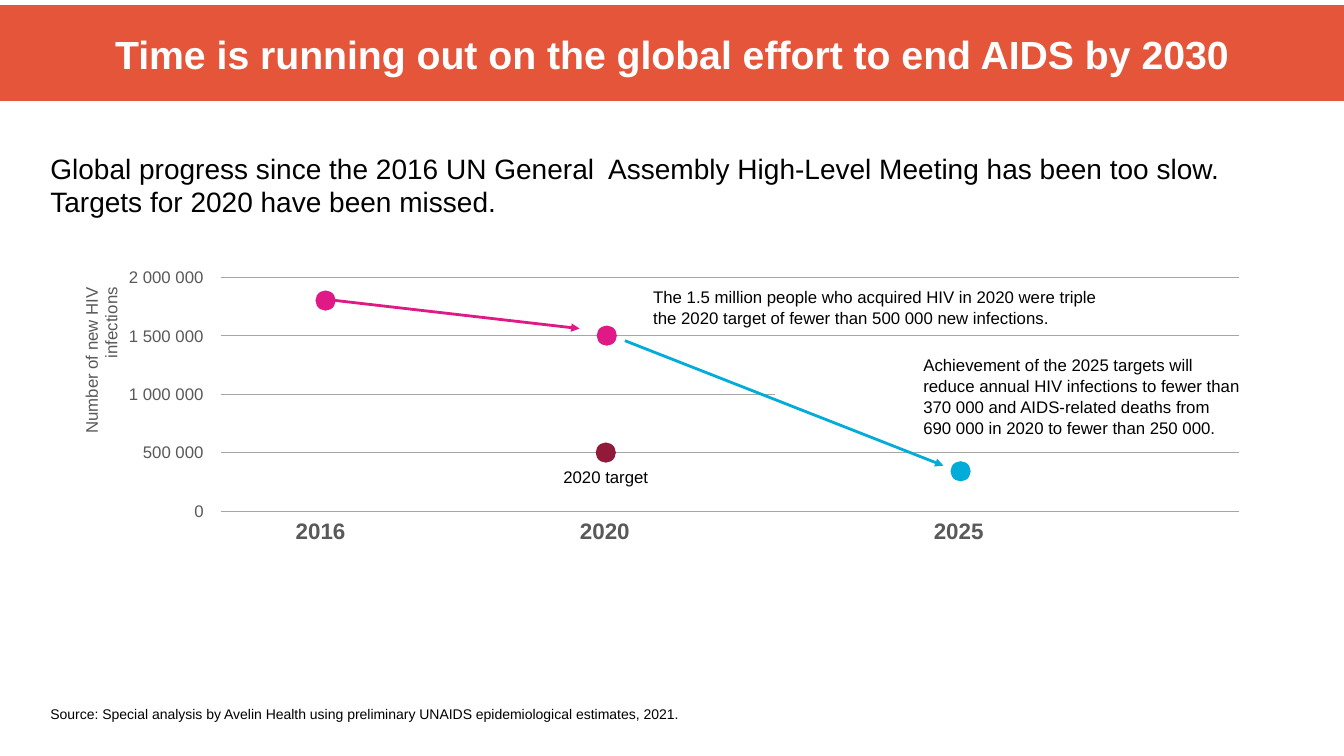
from lxml import etree
from pptx import Presentation
from pptx.dml.color import RGBColor
from pptx.enum.shapes import MSO_CONNECTOR, MSO_SHAPE
from pptx.enum.text import MSO_ANCHOR, PP_ALIGN
from pptx.oxml.ns import qn
from pptx.util import Inches, Pt

STRAIGHT, OVAL = MSO_CONNECTOR.STRAIGHT, MSO_SHAPE.OVAL
TOP, MIDDLE = MSO_ANCHOR.TOP, MSO_ANCHOR.MIDDLE
LEFT, CENTER, RIGHT = PP_ALIGN.LEFT, PP_ALIGN.CENTER, PP_ALIGN.RIGHT

ORANGE = RGBColor(0xE5, 0x55, 0x39)
MAGENTA = RGBColor(0xDF, 0x19, 0x85)
CYAN = RGBColor(0x01, 0xAD, 0xD8)
MAROON = RGBColor(0x91, 0x19, 0x3A)
GREY = RGBColor(0x59, 0x59, 0x59)
RULE = RGBColor(0xA6, 0xA6, 0xA6)
BLACK = RGBColor(0, 0, 0)
WHITE = RGBColor(0xFF, 0xFF, 0xFF)

COLS, ROWS = 40, 22.5
PLOT_LEFT, PLOT_RIGHT, SHORT_RIGHT = 6.57, 36.87, 23.07
ZERO_ROW, STEP_ROWS, STEP_VALUE = 15.21, 1.74, 500_000


def value_row(value):
    """Return the grid row of a number of new infections."""
    return ZERO_ROW - STEP_ROWS * value / STEP_VALUE


class Deck:
    """Hold the style, the grid and the current slide."""

    font = "Arial"

    def __init__(self):
        """Open a widescreen deck with one title-only slide."""
        self.prs = Presentation()
        self.prs.slide_width, self.prs.slide_height = Inches(13.33), Inches(7.5)
        self.s = self.prs.slides.add_slide(self.prs.slide_layouts[5])

    def x(self, cols):
        """Convert grid columns to a length."""
        return round(self.prs.slide_width * cols / COLS)

    def y(self, rows):
        """Convert grid rows to a length."""
        return round(self.prs.slide_height * rows / ROWS)

    def place(self, sp, left, top, width, height):
        """Set the position and size of a shape in grid units."""
        sp.left, sp.top = self.x(left), self.y(top)
        sp.width, sp.height = self.x(width), self.y(height)

    def fill_text(self, tf, paragraphs, size, color, bold=False, align=LEFT,
                  anchor=TOP, spacing=None, wrap=True):
        """Fill a text frame, one run to a paragraph."""
        tf.word_wrap, tf.vertical_anchor = wrap, anchor
        tf.margin_left = tf.margin_right = tf.margin_top = tf.margin_bottom = 0
        for i, text in enumerate(paragraphs):
            p = tf.add_paragraph() if i else tf.paragraphs[0]
            p.alignment = align
            if spacing:
                p.line_spacing = Pt(spacing)
            r = p.add_run()
            r.text = text
            r.font.name, r.font.size, r.font.bold = self.font, Pt(size), bold
            r.font.color.rgb = color

    def title(self, text, left, top, width, height):
        """Format the title placeholder as a coloured band."""
        sp = self.s.shapes.title
        self.place(sp, left, top, width, height)
        sp.fill.solid()
        sp.fill.fore_color.rgb = ORANGE
        self.fill_text(sp.text_frame, [text], 28, WHITE, True, CENTER, MIDDLE, 32)
        sp.text_frame.margin_top, sp.text_frame.margin_bottom = self.y(0.3), self.y(0.15)

    def text(self, paragraphs, left, top, width, height, size=12, color=BLACK,
             vertical=False, **style):
        """Add a text box, turned upwards if vertical."""
        sp = self.s.shapes.add_textbox(0, 0, 0, 0)
        self.place(sp, left, top, width, height)
        self.fill_text(sp.text_frame, paragraphs, size, color, **style)
        if vertical:
            sp.text_frame._txBody.bodyPr.set("vert", "vert270")

    def line(self, x1, y1, x2, y2, color, width, arrow=False):
        """Add a straight line, with an arrowhead if asked."""
        sp = self.s.shapes.add_connector(
            STRAIGHT, self.x(x1), self.y(y1), self.x(x2), self.y(y2))
        sp.line.color.rgb, sp.line.width = color, Pt(width)
        if arrow:
            etree.SubElement(sp.line._get_or_add_ln(), qn("a:tailEnd"), type="triangle")
        etree.SubElement(sp._element.spPr, qn("a:effectLst"))

    def dot(self, col, row, color, size=0.6):
        """Add a round marker centred on a grid point."""
        sp = self.s.shapes.add_shape(OVAL, 0, 0, 0, 0)
        self.place(sp, col - size / 2, row - size / 2, size, size)
        sp.shadow.inherit = False
        sp.fill.solid()
        sp.fill.fore_color.rgb = color
        sp.line.fill.background()


def main():
    """Build and save the slide."""
    deck = Deck()
    deck.title("Time is running out on the global effort to end AIDS by 2030",
               0, 0.15, COLS, 2.85)
    deck.text(["Global progress since the 2016 UN General  Assembly High-Level Meeting "
               "has been too slow. Targets for 2020 have been missed."],
              1.5, 4.5, 37.5, 2, size=20)
    deck.text(["Source: Special analysis by Avelin Health using preliminary UNAIDS "
               "epidemiological estimates, 2021."], 1.5, 21, 25.2, 0.5, size=10)

    for value in range(2_000_000, -1, -STEP_VALUE):
        row = value_row(value)
        right = SHORT_RIGHT if value == 1_000_000 else PLOT_RIGHT
        deck.line(PLOT_LEFT, row, right, row, RULE, 0.25)
        deck.text([f"{value:,}".replace(",", " ")], 3, row - 0.45, 3.06, 0.9,
                  color=GREY, align=RIGHT, anchor=MIDDLE, spacing=14)
    deck.text(["Number of new HIV infections"], 2.43, 8.55, 0.6, 6.6,
              color=GREY, vertical=True, align=RIGHT, spacing=14)

    deck.text(["The 1.5 million people who acquired HIV in 2020 were triple the 2020 "
               "target of fewer than 500 000 new infections."],
              19.44, 8.52, 13.5, 1.2, spacing=15)
    deck.text(["Achievement of the 2025 targets will reduce annual HIV infections to "
               "fewer than 370 000 and AIDS-related deaths from",
               "690 000 in 2020 to fewer than 250 000."],
              27.48, 10.53, 9.63, 2.5, spacing=15)

    deck.line(9.69, 8.91, 17.25, 9.78, MAGENTA, 2, arrow=True)
    deck.line(18.6, 10.14, 28.08, 13.86, CYAN, 2, arrow=True)
    for col, value, color in ((9.69, 1_800_000, MAGENTA), (18.06, 1_500_000, MAGENTA),
                              (18.03, 500_000, MAROON), (28.59, 340_000, CYAN)):
        deck.dot(col, value_row(value), color)
    deck.text(["2020 target"], 16.53, 13.89, 3, 0.5, align=CENTER, wrap=False)
    for year, col in (("2016", 9.54), ("2020", 18), ("2025", 28.53)):
        deck.text([year], col - 1, 15.39, 2, 0.8, size=16, color=GREY,
                  bold=True, align=CENTER, wrap=False)
    deck.prs.save("out.pptx")


if __name__ == "__main__":
    main()
